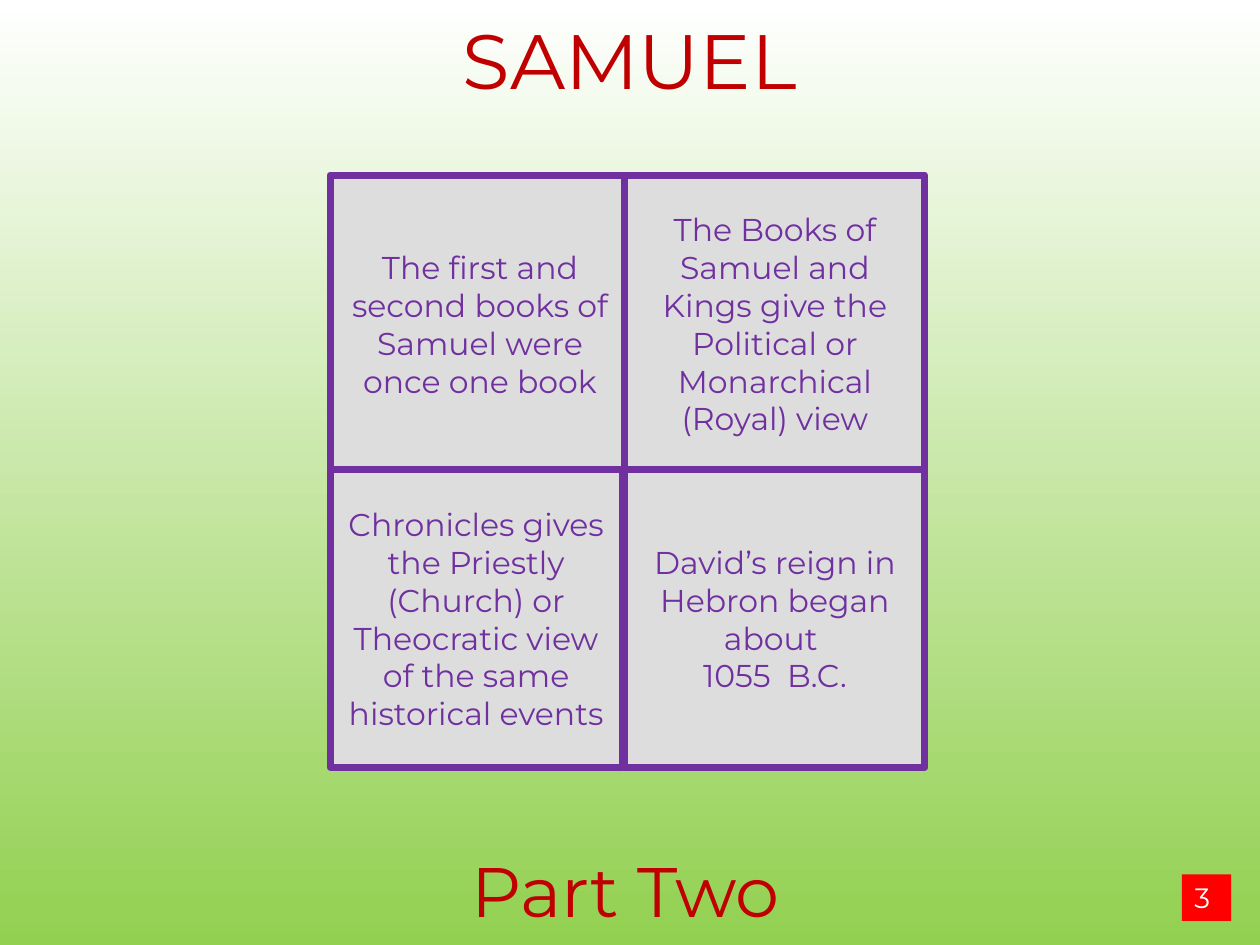
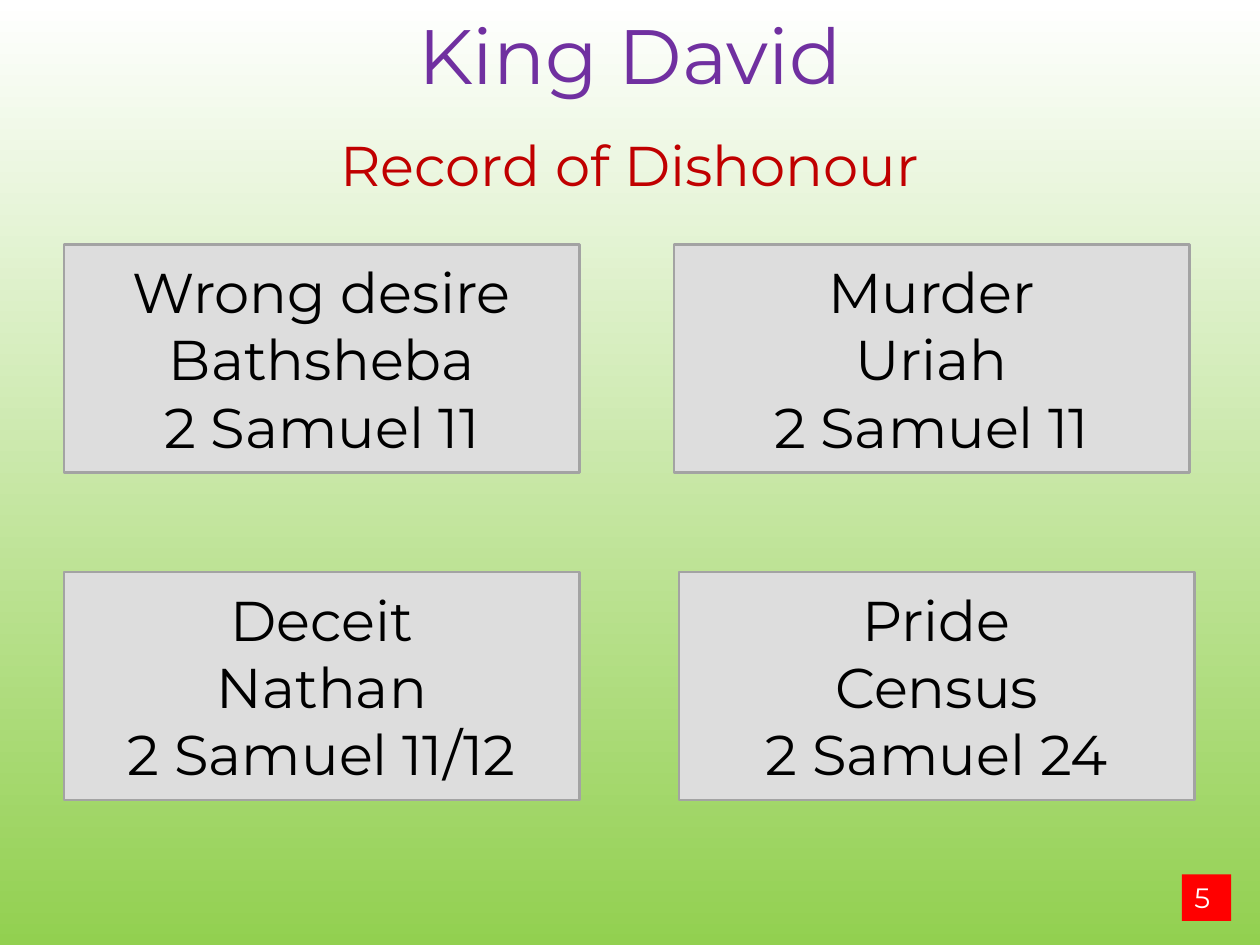
from pptx import Presentation
from pptx.dml.color import RGBColor
from pptx.enum.shapes import MSO_SHAPE
from pptx.enum.text import MSO_ANCHOR, MSO_AUTO_SIZE, PP_ALIGN
from pptx.util import Pt

# Shared colours and formats
WHITE = RGBColor(0xFF, 0xFF, 0xFF)
BLACK = RGBColor(0x00, 0x00, 0x00)
GREEN = RGBColor(0x92, 0xD0, 0x50)
RED = RGBColor(0xFF, 0x00, 0x00)
DARK_RED = RGBColor(0xC0, 0x00, 0x00)
PURPLE = RGBColor(0x70, 0x30, 0xA0)
LIGHT_GREY = RGBColor(0xDD, 0xDD, 0xDD)
MID_GREY = RGBColor(0xA3, 0xA3, 0xA3)

FONT = "Montserrat"
GROWING = {"word_wrap": True, "auto_size": MSO_AUTO_SIZE.SHAPE_TO_FIT_TEXT,
           "vertical_anchor": MSO_ANCHOR.TOP}
CENTRED = {"word_wrap": True, "auto_size": MSO_AUTO_SIZE.NONE,
           "vertical_anchor": MSO_ANCHOR.MIDDLE}


def set_attributes(target, values):
    for name, value in values.items():
        setattr(target, name, value)


def write_text(shape, lines, size, color, frame_format, alignment=PP_ALIGN.CENTER):
    """Write one paragraph for each line, all in one style."""
    frame = shape.text_frame
    frame.text = "\n".join(lines)
    set_attributes(frame, frame_format)
    for paragraph in frame.paragraphs:
        paragraph.alignment = alignment
        for run in paragraph.runs:
            set_attributes(run.font, {"name": FONT, "size": Pt(size)})
            run.font.color.rgb = color


def add_gradient_slide(presentation):
    """Add a blank slide shaded from white at the top to green."""
    slide = presentation.slides.add_slide(presentation.slide_layouts[6])
    fill = slide.background.fill
    fill.gradient()
    fill.gradient_angle = 270
    for stop, color in zip(fill.gradient_stops, (WHITE, GREEN)):
        stop.color.rgb = color
    return slide


def add_heading(slide, text, box, size, color):
    shape = slide.shapes.add_textbox(*map(Pt, box))
    write_text(shape, [text], size, color, GROWING)


def add_rectangle(slide, box, fill_color, line_color=None, line_width=0):
    shape = slide.shapes.add_shape(MSO_SHAPE.RECTANGLE, *map(Pt, box))
    shape.shadow.inherit = False
    shape.fill.solid()
    shape.fill.fore_color.rgb = fill_color
    if line_color is None:
        shape.line.fill.background()
    else:
        shape.line.color.rgb = line_color
        shape.line.width = Pt(line_width)
    return shape


def add_page_number(slide, number):
    shape = add_rectangle(slide, (675.4, 499.7, 28.1, 26.6), RED)
    write_text(shape, [str(number)], 16, WHITE, GROWING, PP_ALIGN.LEFT)


def add_panel(slide, box, lines, size, color, line_color, line_width):
    shape = add_rectangle(slide, box, LIGHT_GREY, line_color, line_width)
    write_text(shape, lines, size, color, CENTRED)


def build_samuel_slide(presentation):
    slide = add_gradient_slide(presentation)
    add_page_number(slide, 3)
    add_heading(slide, "SAMUEL", (156, 3.6, 408, 60.5), 44, DARK_RED)
    add_heading(slide, "Part Two", (235.4, 481, 244, 55.4), 40, DARK_RED)

    # Four facts in a two by two grid; the lower left one is narrower
    facts = [
        (171.4, ["The first and second books of Samuel were once one book"]),
        (171.4, ["The Books of Samuel and Kings give the Political or "
                 "Monarchical (Royal) view"]),
        (167, ["Chronicles gives the Priestly (Church) or Theocratic view "
               "of the same historical events"]),
        (171.4, ["David’s reign in Hebron began about ", "1055  B.C."]),
    ]
    for index, (width, lines) in enumerate(facts):
        row, column = divmod(index, 2)
        box = (188.6 + column * 168.5, 100 + row * 168.5, width, 170)
        add_panel(slide, box, lines, 18, PURPLE, PURPLE, 4)


def build_david_slide(presentation):
    slide = add_gradient_slide(presentation)
    add_heading(slide, "King David", (190, 0.7, 340, 60.5), 44, PURPLE)
    add_heading(slide, "Record of Dishonour", (0, 71.3, 720, 46), 32, DARK_RED)

    # Failings: left, top and the lines of each panel
    failings = [
        (36.7, 139.7, ["Wrong desire", "Bathsheba", "2 Samuel 11"]),
        (385.2, 139.7, ["Murder", "Uriah", "2 Samuel 11"]),
        (36.7, 327, ["Deceit", "Nathan", "2 Samuel 11/12"]),
        (388.1, 327, ["Pride", "Census", "2 Samuel 24"]),
    ]
    for left, top, lines in failings:
        box = (left, top, 294.5, 130.3)
        add_panel(slide, box, lines, 32, BLACK, MID_GREY, 1.25)
    add_page_number(slide, 5)


def main():
    presentation = Presentation()
    set_attributes(presentation, {"slide_width": Pt(720), "slide_height": Pt(540)})
    build_samuel_slide(presentation)
    build_david_slide(presentation)
    presentation.save("out.pptx")


if __name__ == "__main__":
    main()
